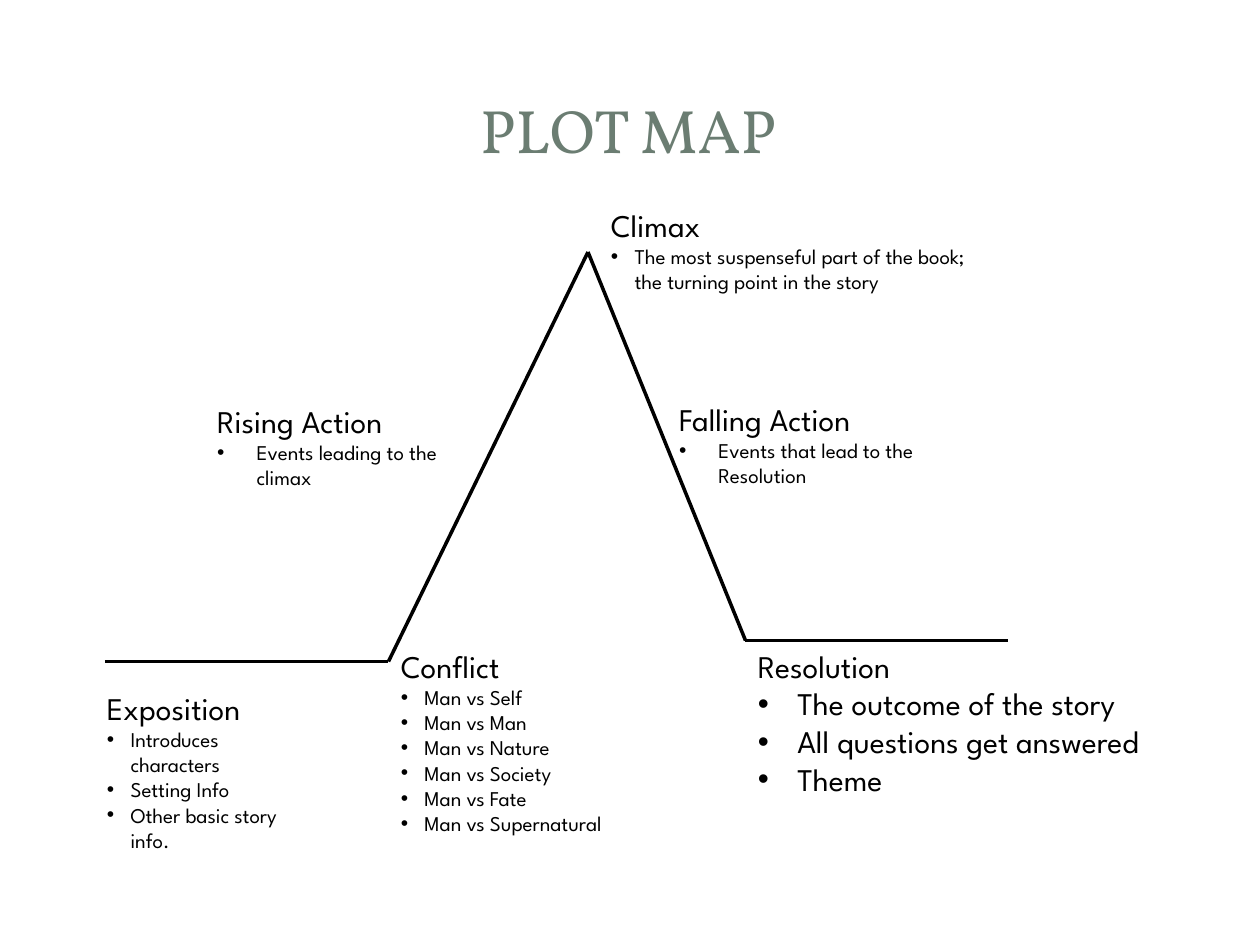
from itertools import pairwise

from lxml import etree
from pptx import Presentation
from pptx.dml.color import RGBColor
from pptx.enum import shapes, text
from pptx.oxml import ns
from pptx.util import Pt

BLACK = RGBColor(0x00, 0x00, 0x00)
SAGE = RGBColor(0x6B, 0x7D, 0x72)
BODY = "League Spartan"
HEAD = "Vollkorn"

ROUTE = [(60, 378), (222, 378), (336, 144), (426, 366), (576, 366)]

STAGES = [
    ((426, 366, 240, 94), "Resolution", 18, 22.5,
     ["The outcome of the story", "All questions get answered", "Theme"]),
    ((117, 226, 162, 58), "Rising Action", 12, 22.5,
     ["Events leading to the climax"]),
    ((342, 114, 234, 58), "Climax", 12, 13.5,
     ["The most suspenseful part of the book; the turning point in the story"]),
    ((381, 225, 186, 58), "Falling Action", 12, 22.5,
     ["Events that lead to the Resolution"]),
    ((222, 366, 160, 117), "Conflict", 12, 13.5,
     ["Man vs " + foe for foe in
      ("Self", "Man", "Nature", "Society", "Fate", "Supernatural")]),
    ((54, 390, 126, 101.5), "Exposition", 12, 13.5,
     ["Introduces characters", "Setting Info", "Other basic story info."]),
]


def add_box(slide, area):
    frame = slide.shapes.add_textbox(*map(Pt, area)).text_frame
    frame.word_wrap = True
    return frame


def add_run(para, words, size, font=BODY, color=BLACK):
    run = para.add_run()
    run.text = words
    run.font.size = Pt(size)
    run.font.name = font
    run.font.color.rgb = color


def set_bullet(para, indent):
    props = para._p.get_or_add_pPr()
    props.set("marL", str(Pt(indent)))
    props.set("indent", str(-Pt(indent)))
    etree.SubElement(props, ns.qn("a:buFont"), typeface="Arial")
    etree.SubElement(props, ns.qn("a:buChar"), char="•")


def add_title(slide, words):
    frame = add_box(slide, (34, 32.5, 650, 82))
    frame.vertical_anchor = text.MSO_ANCHOR.MIDDLE
    para = frame.paragraphs[0]
    para.alignment = text.PP_ALIGN.CENTER
    add_run(para, words, 35, HEAD, SAGE)


def add_line(slide, start, end):
    line = slide.shapes.add_connector(
        shapes.MSO_CONNECTOR.STRAIGHT, *map(Pt, start + end))
    line.line.color.rgb = BLACK
    line.line.width = Pt(2)
    etree.SubElement(line._element.spPr, ns.qn("a:effectLst"))


def add_stage(slide, area, name, size, indent, points):
    frame = add_box(slide, area)
    add_run(frame.paragraphs[0], name, 18)
    for point in points:
        para = frame.add_paragraph()
        set_bullet(para, indent)
        add_run(para, point, size)


def main():
    deck = Presentation()
    deck.slide_width, deck.slide_height = Pt(720), Pt(540)
    slide = deck.slides.add_slide(deck.slide_layouts[6])
    add_title(slide, "PLOT MAP")
    for start, end in pairwise(ROUTE):
        add_line(slide, start, end)
    for stage in STAGES:
        add_stage(slide, *stage)
    deck.save("out.pptx")


if __name__ == "__main__":
    main()
